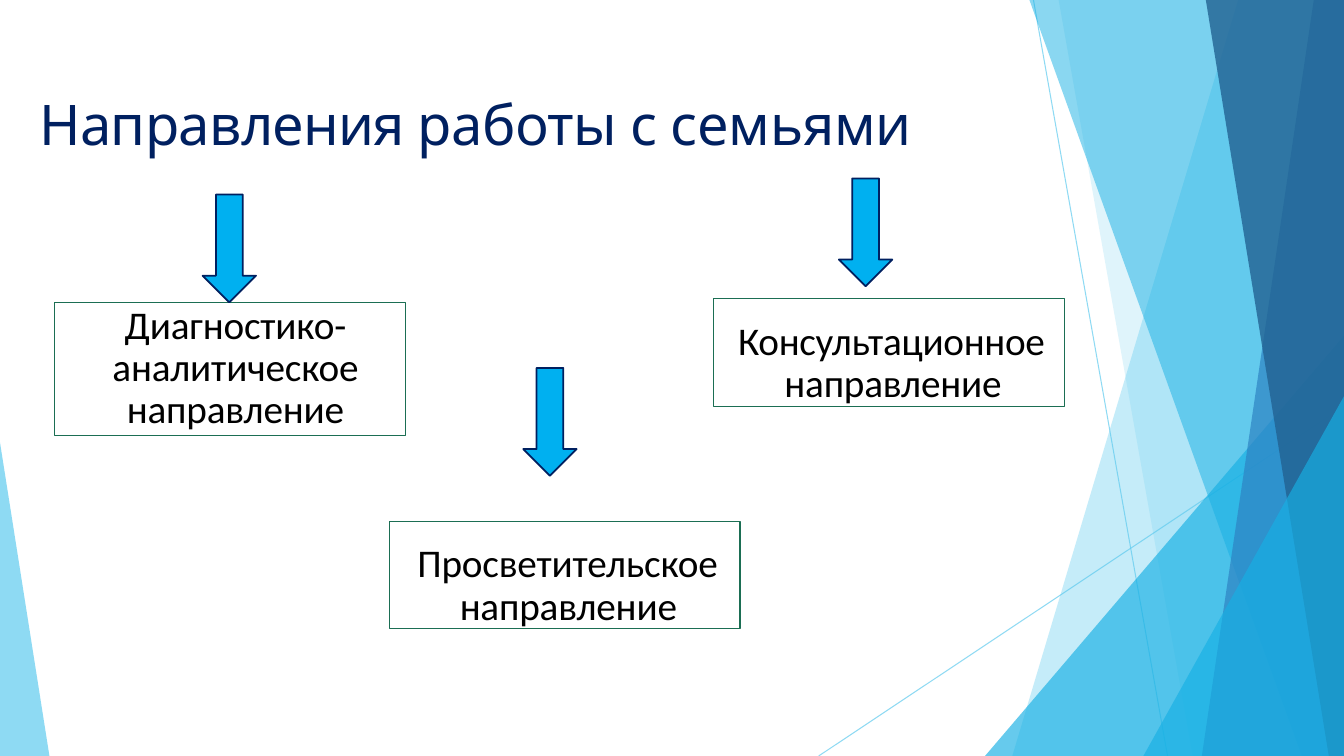
from lxml.etree import SubElement
from pptx import Presentation
from pptx.dml.color import RGBColor
from pptx.enum.shapes import MSO_CONNECTOR as Connector, MSO_SHAPE as Preset
from pptx.enum.text import MSO_ANCHOR as Anchor, PP_ALIGN as Align
from pptx.oxml.ns import qn
from pptx.util import Inches, Pt

WIDTH, HEIGHT = 13.33, 7.5
SKY = RGBColor(0x5F, 0xCB, 0xEF)
AZURE = RGBColor(0x17, 0xB0, 0xE4)
BLUE = RGBColor(0x2E, 0x83, 0xC3)
DEEP_BLUE = RGBColor(0x22, 0x62, 0x92)
ARROW_BLUE = RGBColor(0x00, 0xB0, 0xF0)
NAVY = RGBColor(0x00, 0x20, 0x60)
GREEN = RGBColor(0x1B, 0x6E, 0x53)
BLACK = RGBColor(0, 0, 0)


def set_opacity(fill, color, percent):
    fill.solid()
    fill.fore_color.rgb = color
    color_element = fill._xPr.find(qn("a:solidFill"))[0]
    SubElement(color_element, qn("a:alpha")).set("val", str(percent * 1000))


def style_facet(shape, color, opacity):
    shape.shadow.inherit = False
    set_opacity(shape.fill, color, opacity)
    shape.line.fill.background()


def add_ray(slide, start, end):
    ray = slide.shapes.add_connector(
        Connector.STRAIGHT, *(Inches(value) for value in start + end))
    ray.line.width = Pt(0.75)
    set_opacity(ray.line.fill, SKY, 70)
    SubElement(ray._element.spPr, qn("a:effectLst"))


def add_band(slide, top_left, bottom_left, bottom_right, color, opacity):
    builder = slide.shapes.build_freeform(Inches(top_left), 0)
    corners = [(WIDTH, 0), (bottom_right, HEIGHT), (bottom_left, HEIGHT)]
    builder.add_line_segments([(Inches(x), Inches(y)) for x, y in corners])
    style_facet(builder.convert_to_shape(), color, opacity)


def add_corner(slide, left, top, width, apex, color, opacity):
    triangle = slide.shapes.add_shape(
        Preset.ISOSCELES_TRIANGLE, Inches(left), Inches(top), Inches(width), Inches(HEIGHT - top))
    triangle.adjustments[0] = apex
    style_facet(triangle, color, opacity)


def write_text(shape, runs, font_name, size, color, top_inset, indent, first_line=0):
    frame = shape.text_frame
    frame.word_wrap = True
    frame.vertical_anchor = Anchor.TOP
    frame.margin_left = frame.margin_right = frame.margin_bottom = 0
    frame.margin_top = Inches(top_inset)
    paragraph = frame.paragraphs[0]
    paragraph.alignment = Align.LEFT
    paragraph.font.name = font_name
    paragraph.font.size = Pt(size)
    paragraph.font.color.rgb = color
    properties = paragraph._p.get_or_add_pPr()
    properties.set("marL", str(Inches(indent)))
    properties.set("indent", str(Inches(first_line)))
    for text, spacing in runs:
        run = paragraph.add_run()
        run.text = text
        run._r.get_or_add_rPr().set("spc", str(round(spacing * 100)))
    return paragraph


def add_title(slide):
    title = slide.shapes.add_textbox(Inches(0.17), Inches(0.17), Inches(9.4), Inches(1.44))
    runs = [("Направления ", -0.5), ("работы ", -0.4), ("с ", 0), ("семьями", -0.1)]
    write_text(title, runs, "Karla", 40, NAVY, 0.76, 0.22)


def add_box(slide, left, top, height, runs, top_inset, indent, first_line=0):
    box = slide.shapes.add_shape(
        Preset.RECTANGLE, Inches(left), Inches(top), Inches(3.48), Inches(height))
    box.shadow.inherit = False
    box.fill.background()
    box.line.color.rgb = GREEN
    box.line.width = Pt(0.75)
    return write_text(box, runs, "Calibri", 28, BLACK, top_inset, indent, first_line)


def add_centred_box(slide, left, top, runs):
    paragraph = add_box(slide, left, top, 1.32, runs, 0.03, 0.56)
    paragraph.alignment = Align.CENTER
    paragraph.line_spacing = 0.9
    paragraph._p.get_or_add_pPr().set("marR", str(Inches(0.45)))


def add_hanging_box(slide, left, top, runs, first_line):
    paragraph = add_box(slide, left, top, 1.07, runs, 0.22, 0.7, first_line)
    paragraph.line_spacing = Pt(30.3)
    paragraph.space_before = Pt(16)


def add_down_arrow(slide, left, top):
    arrow = slide.shapes.add_shape(
        Preset.DOWN_ARROW, Inches(left), Inches(top), Inches(0.53), Inches(1.07))
    arrow.shadow.inherit = False
    arrow.fill.solid()
    arrow.fill.fore_color.rgb = ARROW_BLUE
    arrow.line.color.rgb = NAVY
    arrow.line.width = Pt(1.25)


def add_facets(slide):
    add_ray(slide, (10.25, 0), (11.58, HEIGHT))
    add_ray(slide, (WIDTH, 4.03), (8.12, HEIGHT))
    add_band(slide, 12.28, 10.04, WIDTH, SKY, 36)
    add_band(slide, 10.5, 11.83, WIDTH, SKY, 20)
    add_corner(slide, 9.77, 3.33, 3.56, 1, AZURE, 66)
    add_band(slide, 10.21, 12.91, WIDTH, AZURE, 50)
    add_band(slide, 13.03, 11.92, WIDTH, BLUE, 70)
    add_band(slide, 11.96, 13.18, WIDTH, DEEP_BLUE, 80)
    add_corner(slide, 11.34, 3.93, 1.99, 1, AZURE, 66)
    add_corner(slide, 0, 4.39, 0.49, 0, SKY, 70)


def main():
    presentation = Presentation()
    presentation.slide_width = Inches(WIDTH)
    presentation.slide_height = Inches(HEIGHT)
    slide = presentation.slides.add_slide(presentation.slide_layouts[6])
    add_facets(slide)
    add_title(slide)
    add_centred_box(slide, 0.54, 3, [("Диагностико- аналитическое направление", -0.1)])
    add_hanging_box(slide, 3.86, 5.17, [("Просветительское направление", -0.1)], -0.42)
    add_hanging_box(
        slide, 7.08, 2.96, [("Консультационное ", -0.2), ("направление", -0.1)], -0.46)
    for left, top in [(2.01, 1.93), (5.19, 3.65), (8.32, 1.77)]:
        add_down_arrow(slide, left, top)
    presentation.save("out.pptx")


if __name__ == "__main__":
    main()
